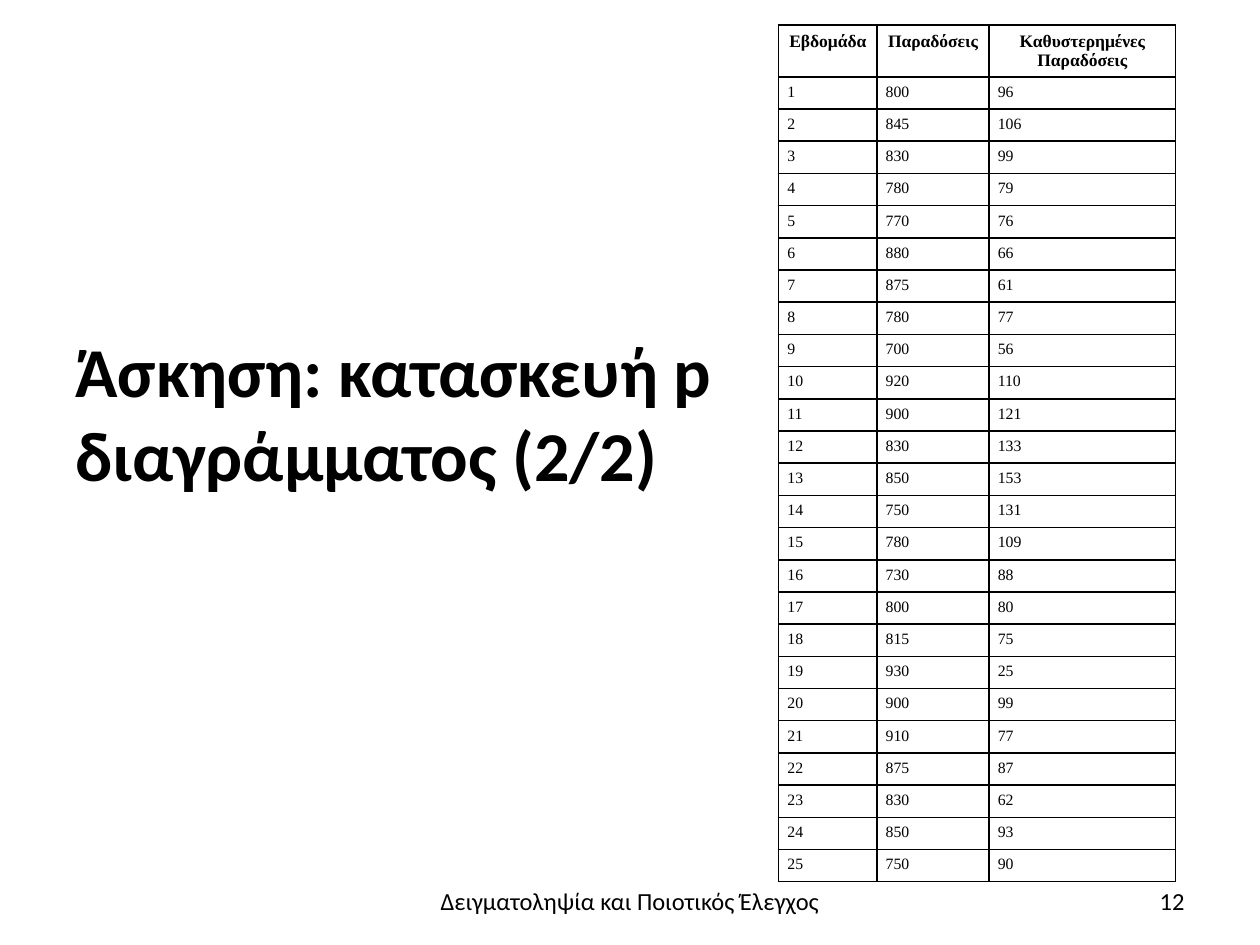
from lxml import etree
from pptx import Presentation
from pptx.dml.color import RGBColor
from pptx.enum.text import MSO_ANCHOR, MSO_AUTO_SIZE, PP_ALIGN
from pptx.oxml.ns import qn
from pptx.util import Inches, Pt

LEFT, CENTER, RIGHT = PP_ALIGN.LEFT, PP_ALIGN.CENTER, PP_ALIGN.RIGHT
TOP, MIDDLE, BOTTOM = MSO_ANCHOR.TOP, MSO_ANCHOR.MIDDLE, MSO_ANCHOR.BOTTOM
NO_FIT = MSO_AUTO_SIZE.NONE

COLORS = {"text": "000000", "border": "000000", "paper": "FFFFFF"}
FORMATS = {
    "title": {"name": "Calibri", "size": Pt(40), "bold": True},
    "footer": {"name": "Calibri", "size": Pt(14), "bold": False},
    "header": {"name": "Times New Roman", "size": Pt(10), "bold": True},
    "cell": {"name": "Times New Roman", "size": Pt(9), "bold": False},
}
CELL_MARGINS = {"margin_left": 0.07, "margin_right": 0.07,
                "margin_top": 0.05, "margin_bottom": 0.05}

HEADERS = ["Εβδομάδα", "Παραδόσεις", "Καθυστερημένες Παραδόσεις"]
DELIVERIES = [800, 845, 830, 780, 770, 880, 875, 780, 700, 920, 900, 830, 850,
              750, 780, 730, 800, 815, 930, 900, 910, 875, 830, 850, 750]
DELAYED = [96, 106, 99, 79, 76, 66, 61, 77, 56, 110, 121, 133, 153,
           131, 109, 88, 80, 75, 25, 99, 77, 87, 62, 93, 90]
COLUMN_WIDTHS = [0.78, 0.89, 1.48]
TABLE_HEIGHT, HEADER_HEIGHT = 6.8, 0.41


class SlideBuilder:
    def __init__(self, prs):
        self.s = prs.slides.add_slide(prs.slide_layouts[5])
        self.s.background.fill.solid()
        self.s.background.fill.fore_color.rgb = RGBColor.from_string(COLORS["paper"])

    def add_text(self, tf, text, style, align):
        p = tf.paragraphs[0]
        p.alignment = align
        r = p.add_run()
        r.text = text
        for attr, value in FORMATS[style].items():
            setattr(r.font, attr, value)
        r.font.color.rgb = RGBColor.from_string(COLORS["text"])

    def frame(self, sp, text, style, align, anchor):
        """Fill a shape's text frame with one wrapped paragraph."""
        tf = sp.text_frame
        tf.word_wrap = True
        tf.auto_size = NO_FIT
        tf.vertical_anchor = anchor
        self.add_text(tf, text, style, align)

    def title(self, text, left, top, width, height):
        sp = self.s.shapes.title
        sp.left, sp.top = Inches(left), Inches(top)
        sp.width, sp.height = Inches(width), Inches(height)
        self.frame(sp, text, "title", LEFT, BOTTOM)

    def footer(self, text, left, width, align):
        sp = self.s.shapes.add_textbox(
            Inches(left), Inches(6.95), Inches(width), Inches(0.4))
        self.frame(sp, text, "footer", align, MIDDLE)

    def borders(self, cell):
        tc_pr = cell._tc.get_or_add_tcPr()
        for i, side in enumerate(("lnL", "lnR", "lnT", "lnB")):
            ln = etree.Element(qn(f"a:{side}"), w=str(Pt(1)))
            fill = etree.SubElement(ln, qn("a:solidFill"))
            etree.SubElement(fill, qn("a:srgbClr"), val=COLORS["border"])
            tc_pr.insert(i, ln)

    def cell(self, cell, text, style, align):
        for attr, value in CELL_MARGINS.items():
            setattr(cell, attr, Inches(value))
        cell.vertical_anchor = TOP
        cell.fill.solid()
        cell.fill.fore_color.rgb = RGBColor.from_string(COLORS["paper"])
        self.borders(cell)
        self.add_text(cell.text_frame, text, style, align)

    def table(self, rows, left, top):
        """Draw rows as a grid whose first row is the header."""
        table = self.s.shapes.add_table(
            len(rows), len(COLUMN_WIDTHS), Inches(left), Inches(top),
            Inches(sum(COLUMN_WIDTHS)), Inches(TABLE_HEIGHT)).table
        table.horz_banding = False
        for column, width in zip(table.columns, COLUMN_WIDTHS):
            column.width = Inches(width)
        row_height = (TABLE_HEIGHT - HEADER_HEIGHT) / (len(rows) - 1)
        for i, values in enumerate(rows):
            table.rows[i].height = Inches(row_height if i else HEADER_HEIGHT)
            style, align = ("cell", LEFT) if i else ("header", CENTER)
            for j, value in enumerate(values):
                self.cell(table.cell(i, j), str(value), style, align)


def main():
    prs = Presentation()
    prs.slide_width, prs.slide_height = Inches(10), Inches(7.5)
    slide = SlideBuilder(prs)
    slide.title("Άσκηση: κατασκευή p διαγράμματος (2/2)", 0.5, 1.78, 5.29, 2.2)
    weeks = range(1, len(DELIVERIES) + 1)
    slide.table([HEADERS, *zip(weeks, DELIVERIES, DELAYED)], 6.18, 0.2)
    slide.footer("Δειγματοληψία και Ποιοτικός Έλεγχος", 2.36, 5.28, CENTER)
    slide.footer("12", 7.17, 2.33, RIGHT)
    prs.save("out.pptx")


if __name__ == "__main__":
    main()
